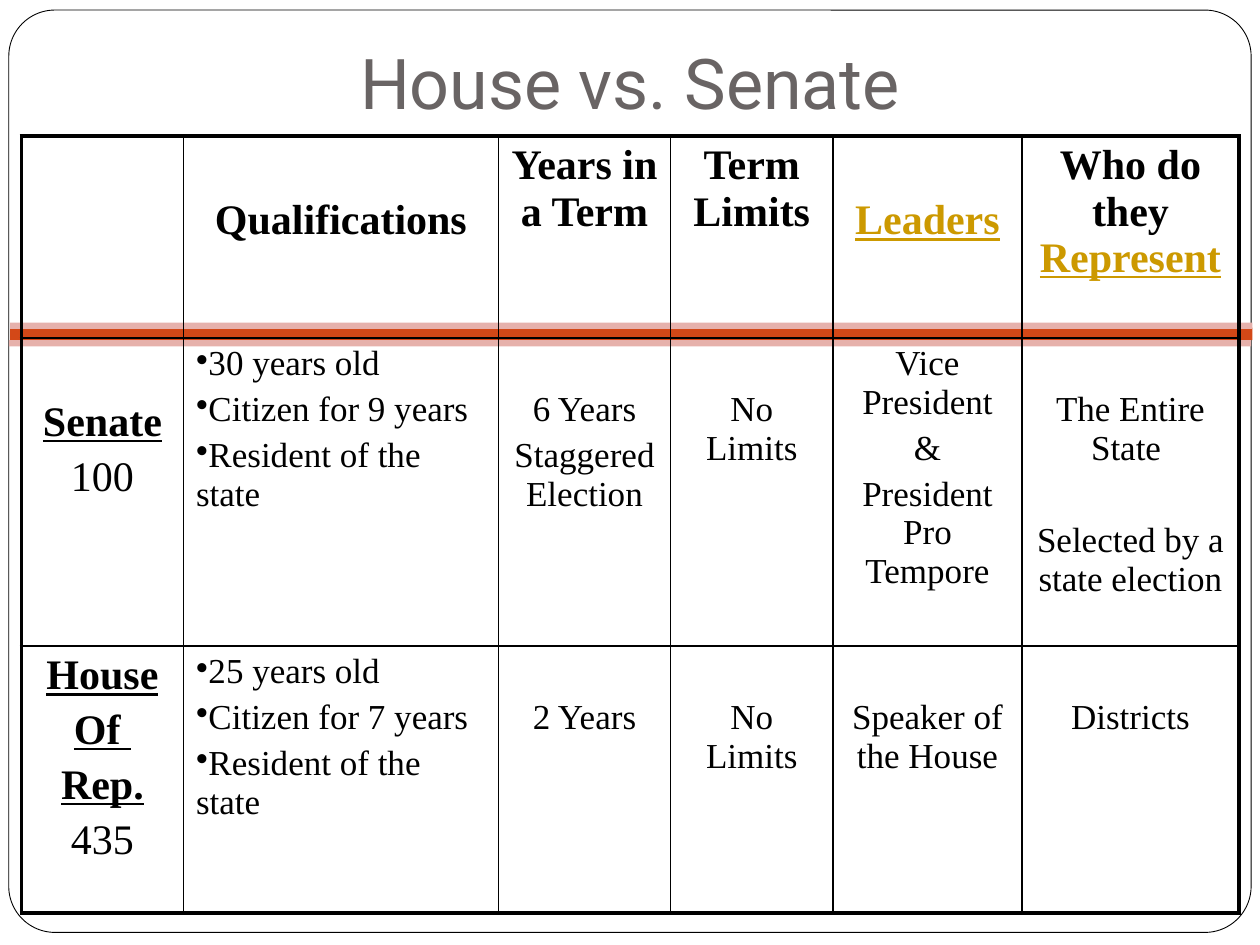
from dataclasses import dataclass
from typing import Optional

from pptx import Presentation
from pptx.dml.color import RGBColor
from pptx.enum.shapes import MSO_SHAPE as Kind
from pptx.enum.text import MSO_ANCHOR as Anchor, PP_ALIGN as Align
from pptx.oxml import parse_xml
from pptx.oxml.ns import nsdecls
from pptx.util import Pt

FACE = "Times New Roman"
BLACK, GOLD = "000000", "CC9900"
COLS = [92.6, 180, 98.4, 92.8, 108, 124]
ROWS = [115.4, 176, 152.6]


@dataclass
class Line:
    text: str
    size: float = 20
    bold: bool = False
    under: bool = False
    color: str = BLACK
    bullet: bool = False
    link: str = ""
    gap: Optional[float] = None


@dataclass
class Entry:
    lines: list[Line]
    drop: float = 0


@dataclass
class Band:
    kind: Kind
    box: tuple[float, float, float, float]
    fill: str
    edge: str = ""


def paint(target, color: str) -> None:
    target.solid()
    target.fore_color.rgb = RGBColor.from_string(color)


def draw_band(slide, band: Band) -> None:
    shape = slide.shapes.add_shape(band.kind, *map(Pt, band.box))
    shape.shadow.inherit = False
    paint(shape.fill, band.fill)
    if band.edge:
        shape.adjustments[0] = 0.05
        paint(shape.line.fill, band.edge)
        shape.line.width = Pt(0.5)
    else:
        shape.line.fill.background()


def draw_title(slide, text: str) -> None:
    title = slide.shapes.title
    slide.shapes._spTree.append(title._element)
    title.left, title.top, title.width, title.height = map(Pt, (54, 23.76, 612, 54))
    frame = title.text_frame
    frame.text = text
    frame.word_wrap = True
    frame.vertical_anchor = Anchor.BOTTOM
    frame.margin_bottom = Pt(7.2)
    para = frame.paragraphs[0]
    para.alignment = Align.CENTER
    para.font.size = Pt(40)
    para.font.name = "Roboto"
    paint(para.font.fill, "696464")


def write_line(para, line: Line, first: bool) -> None:
    para.alignment = Align.LEFT if line.bullet else Align.CENTER
    gap = line.size * 0.2 if line.gap is None else line.gap
    para.space_before = Pt(0 if first else gap)
    if line.bullet:
        props = para._p.get_or_add_pPr()
        props.set("marL", "0")
        props.set("indent", "0")
        props.append(parse_xml(f'<a:buChar {nsdecls("a")} char="•"/>'))
    font = para.font
    font.size, font.name = Pt(line.size), FACE
    font.bold, font.underline = line.bold, line.under
    paint(font.fill, line.color)
    para.add_run().text = line.text
    if line.link:
        run = para.add_run()
        run.text = line.link
        run.font.underline = True
        paint(run.font.fill, GOLD)


def add_edge(cell, side: str, width: float) -> None:
    cell._tc.get_or_add_tcPr().append(parse_xml(
        f'<a:ln{side} {nsdecls("a")} w="{Pt(width)}"><a:solidFill>'
        f'<a:srgbClr val="{BLACK}"/></a:solidFill></a:ln{side}>'))


def fill_cell(cell, entry: Entry, outer: dict[str, bool]) -> None:
    for side, rim in outer.items():
        add_edge(cell, side, 2.25 if rim else 1)
    cell.fill.background()
    cell.margin_top = Pt(3.6 + entry.drop)
    frame = cell.text_frame
    for i, line in enumerate(entry.lines):
        para = frame.add_paragraph() if i else frame.paragraphs[0]
        write_line(para, line, i == 0)


def draw_table(slide, grid: list[list[Entry]]) -> None:
    table = slide.shapes.add_table(
        len(ROWS), len(COLS), Pt(12.24), Pt(77.76), Pt(sum(COLS)), Pt(sum(ROWS))).table
    table.first_row = table.horz_banding = False
    for col, width in zip(table.columns, COLS):
        col.width = Pt(width)
    for row, height in zip(table.rows, ROWS):
        row.height = Pt(height)
    for r, row in enumerate(grid):
        for c, entry in enumerate(row):
            outer = {"L": c == 0, "R": c == len(COLS) - 1,
                     "T": r == 0, "B": r == len(ROWS) - 1}
            fill_cell(table.cell(r, c), entry, outer)


def head(text: str, drop: float = 0, **style) -> Entry:
    return Entry([Line(text, 24, True, **style)], drop)


def name(words: list[str], seats: str, drop: float = 0) -> Entry:
    lines = [Line(word, 24, True, True) for word in words]
    return Entry(lines + [Line(seats, 24)], drop)


def rules(age: int, years: int) -> Entry:
    texts = (f"{age} years old", f"Citizen for {years} years", "Resident of the state")
    return Entry([Line(text, bullet=True) for text in texts])


def body(*texts: str, drop: float = 26.3) -> Entry:
    return Entry([Line(text) for text in texts], drop)


BANDS = [
    Band(Kind.ROUNDED_RECTANGLE, (5.04, 5.76, 709.92, 527.04), "FFFFFF", BLACK),
    Band(Kind.RECTANGLE, (5.76, 187.2, 709.92, 7.2), "D34817"),
    Band(Kind.RECTANGLE, (5.76, 184.32, 709.92, 3.6), "E6B1AC"),
    Band(Kind.RECTANGLE, (5.04, 194.4, 709.92, 3.6), "E6B1AB"),
]

GRID = [
    [Entry([]), head("Qualifications", 31.4), head("Years in a Term"),
     head("Term Limits"), head("Leaders", 31.4, under=True, color=GOLD),
     head("Who do they ", link="Represent")],
    [name(["Senate"], "100", 31.4), rules(30, 9),
     body("6 Years", "Staggered Election"), body("No Limits"),
     body("Vice President", "&", "President Pro Tempore", drop=0),
     Entry([Line("The Entire State "),
            Line("Selected by a state election ", gap=30.3)], 26.3)],
    [name(["House", "Of ", "Rep."], "435"), rules(25, 7), body("2 Years"),
     body("No Limits"), body("Speaker of the House"), body("Districts")],
]


def main() -> None:
    deck = Presentation()
    deck.slide_width, deck.slide_height = Pt(720), Pt(540)
    slide = deck.slides.add_slide(deck.slide_layouts[5])
    for band in BANDS:
        draw_band(slide, band)
    draw_title(slide, "House vs. Senate")
    draw_table(slide, GRID)
    deck.save("out.pptx")


if __name__ == "__main__":
    main()
